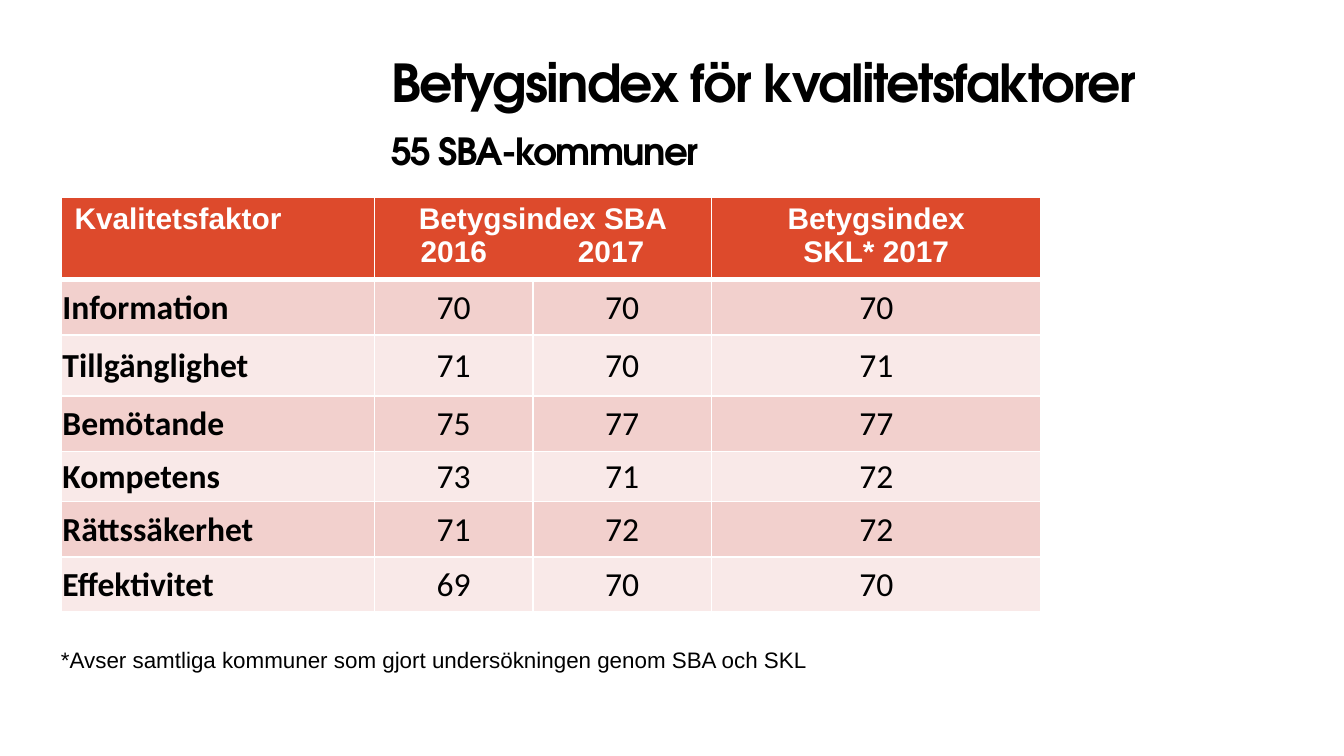
from dataclasses import dataclass
from lxml.etree import SubElement
from pptx import Presentation
from pptx.dml.color import RGBColor
from pptx.enum.text import MSO_ANCHOR, PP_ALIGN
from pptx.oxml.ns import qn
from pptx.util import Inches, Pt

WIDE = 10
HIGH = WIDE * 9 / 16
LEFT, MID = PP_ALIGN.LEFT, PP_ALIGN.CENTER


@dataclass(frozen=True)
class Theme:
    red: str = "DD4A2C"
    bands: tuple = ("F2D0CD", "F9E9E8")
    white: str = "FFFFFF"
    black: str = "000000"
    title: int = 28
    sub: int = 20
    head: int = 16
    body: int = 18
    note: int = 12
    show: str = "TeX Gyre Adventor"
    sans: str = "Arial"
    cell: str = "Calibri"


def across(share):
    """Hundredths of the slide's width."""
    return Inches(WIDE * share / 100)


def down(share):
    """Hundredths of the slide's height."""
    return Inches(HIGH * share / 100)


def apply(item, form):
    for name, value in form.items():
        setattr(item, name, value)


class Deck:
    def __init__(self, theme):
        self.theme = theme
        self.show = Presentation()
        apply(self.show, {"slide_width": across(100), "slide_height": down(100)})
        self.slide = self.show.slides.add_slide(self.show.slide_layouts[6])

    def run(self, para, text, tint, **form):
        run = para.add_run()
        run.text = text
        apply(run.font, form)
        run.font.color.rgb = RGBColor.from_string(tint)
        return run

    def box(self, x, y, w, h, pitch, wrap=True):
        """Add an unpadded text box and return its first paragraph."""
        frame = self.slide.shapes.add_textbox(
            across(x), down(y), across(w), down(h)).text_frame
        apply(frame, dict.fromkeys(
            ("margin_left", "margin_top", "margin_right", "margin_bottom"), 0))
        frame.word_wrap = wrap
        para = frame.paragraphs[0]
        para.line_spacing = Pt(pitch)
        return para

    def grid(self, x, y, cols, rows):
        table = self.slide.shapes.add_table(
            len(rows), len(cols), across(x), down(y),
            across(sum(cols)), down(sum(rows))).table
        apply(table, {"first_row": False, "horz_banding": False})
        for col, size in zip(table.columns, cols):
            col.width = across(size)
        for row, size in zip(table.rows, rows):
            row.height = down(size)
        return table

    def edge(self, cell, top=1, base=1):
        props = cell._tc.get_or_add_tcPr()
        for side, size in zip("LRTB", (1, 1, top, base)):
            line = SubElement(props, qn(f"a:ln{side}"), w=str(Pt(size)))
            fill = SubElement(line, qn("a:solidFill"))
            SubElement(fill, qn("a:srgbClr"), val=self.theme.white)

    def paint(self, cell, tint):
        cell.fill.solid()
        cell.fill.fore_color.rgb = RGBColor.from_string(tint)

    def head(self, cell, lines, align=MID, stops=()):
        look = self.theme
        self.edge(cell, base=3)
        self.paint(cell, look.red)
        apply(cell, {"margin_top": Inches(0.04), "margin_bottom": Inches(0.04)})
        frame = cell.text_frame
        for i, text in enumerate(lines):
            para = frame.add_paragraph() if i else frame.paragraphs[0]
            para.alignment = align
            if "\t" in text:
                para.alignment = LEFT
                tabs = SubElement(para._p.get_or_add_pPr(), qn("a:tabLst"))
                for stop in stops:
                    SubElement(tabs, qn("a:tab"), pos=str(across(stop)), algn="l")
            self.run(para, text, look.white, name=look.sans,
                     size=Pt(look.head), bold=True)

    def cell(self, cell, text, row, label):
        look = self.theme
        self.edge(cell, top=3 if row == 1 else 1)
        self.paint(cell, look.bands[(row - 1) % 2])
        pad = Inches(0.01)
        apply(cell, {"margin_left": pad, "margin_right": pad, "margin_top": pad,
                     "margin_bottom": 0, "vertical_anchor": MSO_ANCHOR.MIDDLE})
        para = cell.text_frame.paragraphs[0]
        para.alignment = LEFT if label else MID
        self.run(para, text, look.black, name=look.cell,
                 size=Pt(look.body), bold=label)


FACTS = [
    ("Information", 70, 70, 70),
    ("Tillgänglighet", 71, 70, 71),
    ("Bemötande", 75, 77, 77),
    ("Kompetens", 73, 71, 72),
    ("Rättssäkerhet", 71, 72, 72),
    ("Effektivitet", 69, 70, 70),
]


def main():
    look = Theme()
    deck = Deck(look)

    # Title and subtitle
    para = deck.box(29.1, 7, 62.1, 14.2, pitch=32.1)
    for i, (text, size) in enumerate((
            ("Betygsindex för kvalitetsfaktorer", look.title),
            ("55 SBA-kommuner", look.sub))):
        if i:
            para.add_line_break()
        run = deck.run(para, text, look.black, name=look.show,
                       size=Pt(size), bold=True)
        run._r.get_or_add_rPr().set("spc", "-87")

    # Table heading
    table = deck.grid(4.55, 26.1, (23.3, 11.8, 13.3, 24.5),
                      (10.85, 7.33, 8.05, 7.33, 6.65, 7.33, 7.25))
    table.cell(0, 1).merge(table.cell(0, 2))
    deck.head(table.cell(0, 0), ["Kvalitetsfaktor"], LEFT)
    deck.head(table.cell(0, 1), ["Betygsindex SBA", "\t2016\t2017"],
              stops=(2.45, 14.15))
    deck.head(table.cell(0, 3), ["Betygsindex", "SKL* 2017"])

    # Table body
    for r, fact in enumerate(FACTS, 1):
        for c, value in enumerate(fact):
            deck.cell(table.cell(r, c), str(value), r, label=c == 0)

    # Footnote
    para = deck.box(4.54, 83.1, 76.4, 6.76, pitch=24, wrap=False)
    deck.run(para, "*Avser samtliga kommuner som gjort undersökningen genom SBA och SKL",
             look.black, name=look.sans, size=Pt(look.note))

    deck.show.save("out.pptx")


if __name__ == "__main__":
    main()
